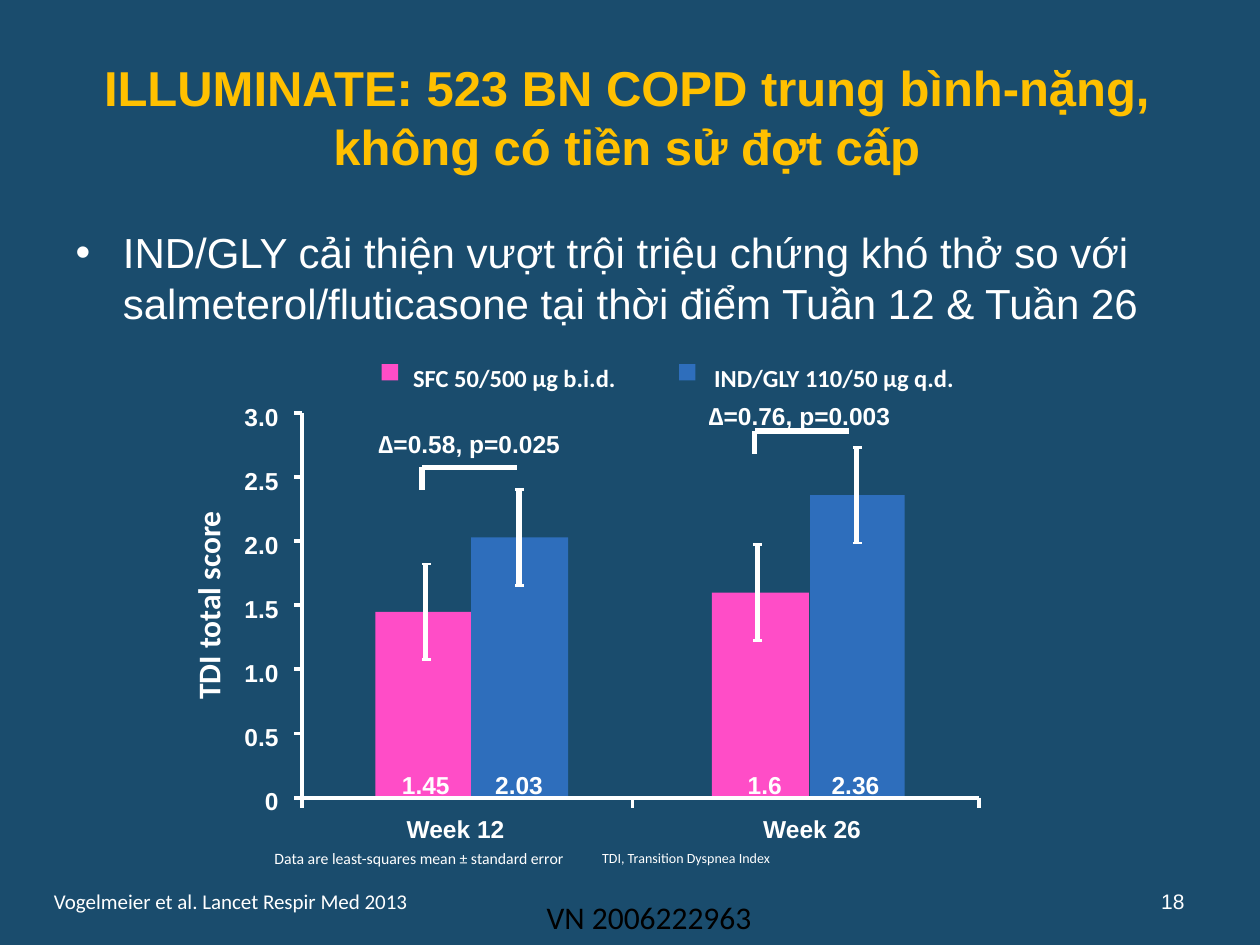
"""Build the ILLUMINATE slide comparing TDI total scores at weeks 12 and 26."""
from dataclasses import dataclass

from lxml import etree
from pptx import Presentation
from pptx.dml.color import RGBColor
from pptx.enum.shapes import MSO_CONNECTOR as Connector, MSO_SHAPE as Shape
from pptx.enum.text import MSO_ANCHOR as Anchor, MSO_AUTO_SIZE as AutoSize, PP_ALIGN as Align
from pptx.oxml.ns import qn
from pptx.util import Inches, Pt


@dataclass(frozen=True)
class Theme:
    background: RGBColor = RGBColor.from_string("1A4C6D")
    gold: RGBColor = RGBColor.from_string("FFC000")
    white: RGBColor = RGBColor.from_string("FFFFFF")
    black: RGBColor = RGBColor.from_string("000000")
    pink: RGBColor = RGBColor.from_string("FF4DC7")
    blue: RGBColor = RGBColor.from_string("2E6EBC")
    heading_font: str = "Arial"
    note_font: str = "Calibri"
    title: int = 28
    body: int = 24
    axis_title: int = 18
    label: int = 14
    footer: int = 12
    note: int = 9
    abbreviation: int = 8
    cap_line: float = 1.5
    axis_line: float = 2.25
    error_line: float = 3


theme = Theme()
presentation = Presentation()
presentation.slide_width = Inches(10)
presentation.slide_height = Inches(7.5)
slide = presentation.slides.add_slide(presentation.slide_layouts[1])
slide.background.fill.solid()
slide.background.fill.fore_color.rgb = theme.background


def write(shape, text, size, font, color=theme.white, bold=False, align=Align.LEFT,
          anchor=Anchor.TOP, wrap=True):
    frame = shape.text_frame
    frame.word_wrap = wrap
    frame.auto_size = AutoSize.NONE
    frame.vertical_anchor = anchor
    paragraph = frame.paragraphs[0]
    paragraph.alignment = align
    paragraph.space_before = Pt(0)
    run = paragraph.add_run()
    run.text = text
    run.font.size = Pt(size)
    run.font.name = font
    run.font.bold = bold
    run.font.color.rgb = color


def draw_line(x1, y1, x2, y2, width):
    line = slide.shapes.add_connector(
        Connector.STRAIGHT, Inches(x1), Inches(y1), Inches(x2), Inches(y2))
    line.line.color.rgb = theme.white
    line.line.width = Pt(width)
    etree.SubElement(line._element.spPr, qn("a:effectLst"))


title = slide.shapes.title
title.left, title.top, title.width, title.height = map(Inches, (0.25, 0.3, 9.45, 1.25))
write(title, "ILLUMINATE: 523 BN COPD trung bình-nặng, không có tiền sử đợt cấp",
      theme.title, theme.heading_font, theme.gold, True, Align.CENTER, Anchor.MIDDLE)

body = slide.placeholders[1]
body.left, body.top, body.width, body.height = map(Inches, (0.5, 1.75, 9, 4.95))
write(body, "IND/GLY cải thiện vượt trội triệu chứng khó thở so với "
      "salmeterol/fluticasone tại thời điểm Tuần 12 & Tuần 26",
      theme.body, theme.heading_font)

axis_left, axis_right, axis_top, baseline = 2.4, 7.77, 3.28, 6.33
inches_per_point = (baseline - axis_top) / 3
error_reach = 0.38

bars = [
    (2.98, 0.76, 1.45, theme.pink, 3.38, 2.98),
    (3.74, 0.77, 2.03, theme.blue, 4.12, 3.72),
    (5.65, 0.77, 1.6, theme.pink, 6.01, 5.67),
    (6.43, 0.75, 2.36, theme.blue, 6.8, 6.39),
]
bar_tops = [baseline - value * inches_per_point for _, _, value, _, _, _ in bars]
rectangles = [(left, top, width, baseline - top, color)
              for (left, width, _, color, _, _), top in zip(bars, bar_tops)]
rectangles += [(3.03, 2.89, 0.13, 0.13, theme.pink), (5.39, 2.89, 0.13, 0.13, theme.blue)]
for left, top, width, height, color in rectangles:
    rectangle = slide.shapes.add_shape(
        Shape.RECTANGLE, Inches(left), Inches(top), Inches(width), Inches(height))
    rectangle.shadow.inherit = False
    rectangle.fill.solid()
    rectangle.fill.fore_color.rgb = color
    rectangle.line.fill.background()

for (_, _, _, _, center, _), top in zip(bars, bar_tops):
    for y in (top - error_reach, top + error_reach):
        draw_line(center - 0.03, y, center + 0.04, y, theme.cap_line)
    draw_line(center, top - error_reach, center, top + error_reach, theme.error_line)

for left, top in ((3.35, 3.71), (5.99, 3.42)):
    draw_line(left + 0.75, top, left, top, theme.error_line)
    draw_line(left, top, left, top + 0.18, theme.error_line)

draw_line(axis_left, axis_top, axis_left, baseline, theme.axis_line)
draw_line(axis_left, baseline, axis_right, baseline, theme.axis_line)
for x in (axis_left, 5.02, axis_right):
    draw_line(x, baseline, x, baseline + 0.08, theme.axis_line)

labels = [
    (2.85, 3.36, 1.75, "∆=0.58, p=0.025"),
    (5.52, 3.13, 1.65, "∆=0.76, p=0.003"),
    (2.74, 6.41, 1.75, "Week 12"),
    (5.57, 6.41, 1.75, "Week 26"),
]
labels += [(left, 6.06, 0.8, str(value)) for _, _, value, _, _, left in bars]
for left, top, width, text in labels:
    box = slide.shapes.add_textbox(Inches(left), Inches(top), Inches(width), Inches(0.34))
    write(box, text, theme.label, theme.heading_font, bold=True, align=Align.CENTER, wrap=False)

for step, text in enumerate(("3.0", "2.5", "2.0", "1.5", "1.0", "0.5", "0")):
    y = axis_top + step * inches_per_point / 2
    draw_line(axis_left, y, axis_left - 0.07, y, theme.axis_line)
    box = slide.shapes.add_textbox(Inches(1.84), Inches(y - 0.14), Inches(0.47), Inches(0.34))
    write(box, text, theme.label, theme.heading_font, bold=True, align=Align.RIGHT, wrap=False)

axis_title = slide.shapes.add_textbox(Inches(0.13), Inches(4.57), Inches(3.04), Inches(0.47))
axis_title.rotation = 270
write(axis_title, "TDI total score", theme.axis_title, theme.note_font, bold=True,
      align=Align.CENTER, anchor=Anchor.MIDDLE)

for left, width, text in ((3.18, 1.82, "SFC 50/500 μg b.i.d."),
                          (5.57, 2.12, "IND/GLY 110/50 μg q.d.")):
    box = slide.shapes.add_textbox(Inches(left), Inches(2.83), Inches(width), Inches(0.34))
    write(box, text, theme.label, theme.note_font, bold=True, wrap=False)

notes = [
    (2.08, 6.69, 4.08, 0.25, "Data are least-squares mean ± standard error",
     theme.note, theme.white),
    (4.68, 6.69, 1.71, 0.24, "TDI, Transition Dyspnea Index", theme.abbreviation, theme.white),
    (0.33, 7, 5.83, 0.3, "Vogelmeier et al. Lancet Respir Med 2013", theme.footer, theme.white),
    (4.24, 7.08, 1.83, 0.4, "VN 2006222963", theme.axis_title, theme.black),
]
for left, top, width, height, text, size, color in notes:
    box = slide.shapes.add_textbox(Inches(left), Inches(top), Inches(width), Inches(height))
    write(box, text, size, theme.note_font, color)

slide_number = slide.shapes.add_textbox(Inches(7.17), Inches(6.95), Inches(2.33), Inches(0.4))
write(slide_number, "18", theme.footer, theme.heading_font, align=Align.RIGHT,
      anchor=Anchor.MIDDLE)

presentation.save("out.pptx")
